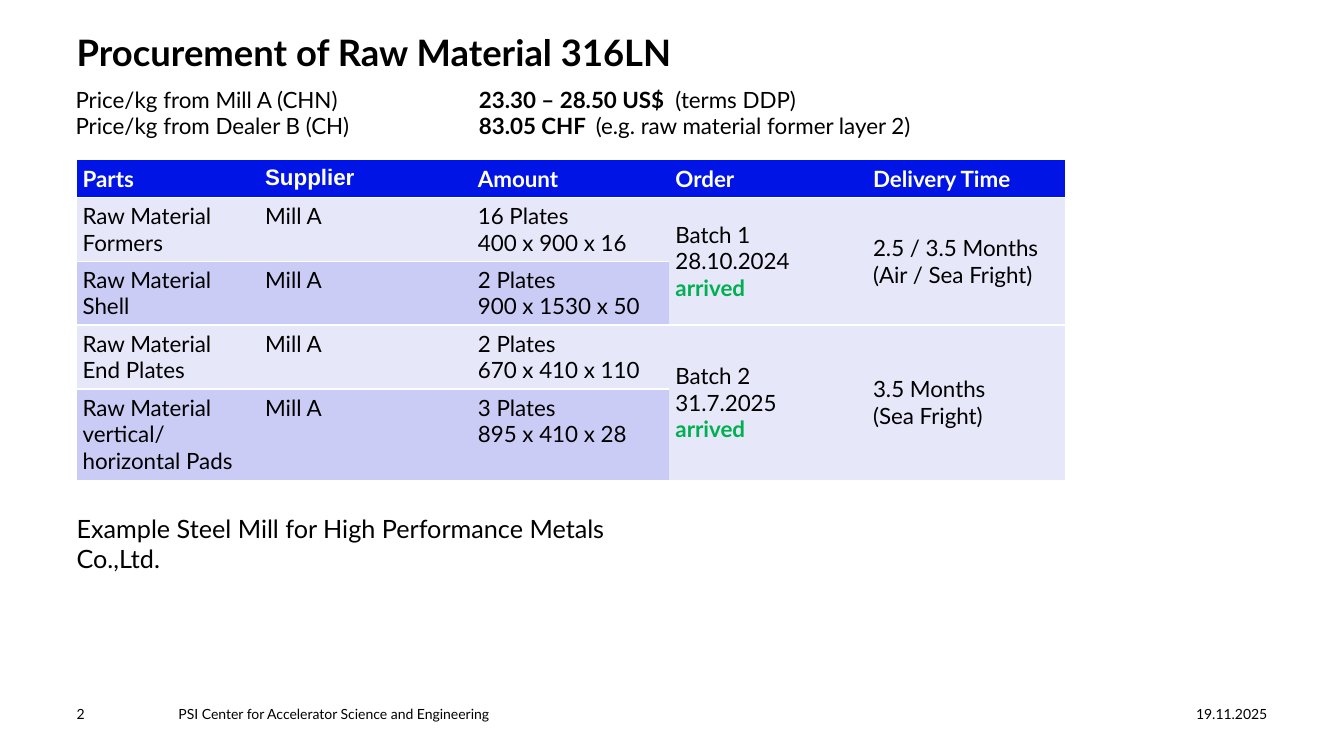
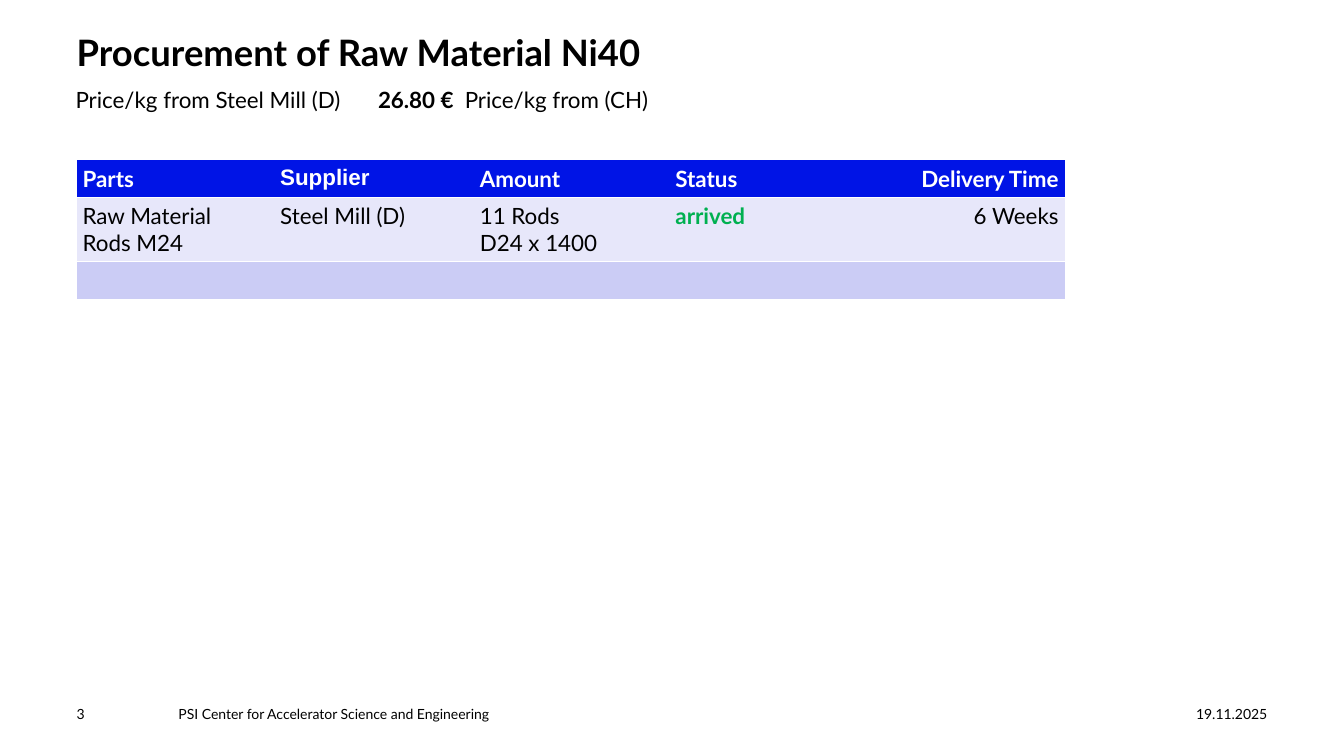
from dataclasses import dataclass

from lxml import etree
from pptx import Presentation
from pptx.dml.color import RGBColor as RGB
from pptx.enum.text import MSO_ANCHOR as ANCHOR, MSO_AUTO_SIZE as FIT, PP_ALIGN as ALIGN
from pptx.oxml.ns import qn
from pptx.util import Inches, Pt


@dataclass(frozen=True)
class Theme:
    # Fonts and type sizes
    font: str = "Lato"
    alt_font: str = "Arial"
    title: int = 26
    note: int = 18
    body: int = 16
    footer: int = 10
    # Colours
    ink: str = "000000"
    white: str = "FFFFFF"
    header: str = "0014E6"
    bands: tuple = ("E7E7FA", "CBCCF5")
    done: str = "00B050"
    # Layout, in inches
    left: float = 0.76
    width: float = 9.8
    line: float = 0.267  # height of one body line


T = Theme()
NO_STYLE = "{2D5ABB26-0587-4C30-8999-92F81FD0307C}"
BOLD = {"bold": True}
ARRIVED = [("arrived", {"bold": True, "color": T.done})]


# Text
def write(tf, paras, size=T.body, color=T.ink, bold=False, font=T.font,
          align=ALIGN.LEFT, tabs=()):
    """Fill a frame; a paragraph is a string or a list of (text, format) runs.

    tabs holds the tab stops of each paragraph, in inches.
    """
    for i, runs in enumerate(paras):
        p = tf.paragraphs[0] if i == 0 else tf.add_paragraph()
        p.alignment = align
        if tabs:
            add_tabs(p, tabs[i])
        for text, fmt in [(runs, {})] if isinstance(runs, str) else runs:
            style = {"size": size, "color": color, "bold": bold, "font": font, **fmt}
            r = p.add_run()
            r.text = text
            r.font.name, r.font.size = style["font"], Pt(style["size"])
            r.font.bold = style["bold"]
            r.font.color.rgb = RGB.from_string(style["color"])


def add_tabs(p, stops):
    tab_list = etree.SubElement(p._p.get_or_add_pPr(), qn("a:tabLst"))
    for stop in stops:
        etree.SubElement(tab_list, qn("a:tab"), pos=str(Inches(stop)), algn="l")


def set_frame(tf):
    tf.margin_left = tf.margin_right = tf.margin_top = tf.margin_bottom = 0
    tf.word_wrap = True
    tf.auto_size = FIT.NONE
    tf.vertical_anchor = ANCHOR.TOP


def add_text(s, box, paras, **fmt):
    tf = s.shapes.add_textbox(*map(Inches, box)).text_frame
    set_frame(tf)
    write(tf, paras, **fmt)


# Slide frame: title and footer
def add_slide(prs, title, number):
    s = prs.slides.add_slide(prs.slide_layouts[5])
    sp = s.shapes.title
    sp.left, sp.top, sp.width, sp.height = map(Inches, (T.left, 0.3, T.width, 0.89))
    set_frame(sp.text_frame)
    write(sp.text_frame, [title], size=T.title, bold=True)
    for x, width, text, align in (
        (T.left, 0.77, str(number), ALIGN.LEFT),
        (1.77, 8.8, "PSI Center for Accelerator Science and Engineering", ALIGN.LEFT),
        (10.8, 1.77, "19.11.2025", ALIGN.RIGHT),
    ):
        add_text(s, (x, 7, width, 0.16), [text], size=T.footer, align=align)
    return s


def add_prices(s, paras, tabs):
    add_text(s, (0.75, 0.85, T.width, T.line * len(paras)), paras, tabs=tabs)


# Table
def add_rule(cell, side):
    ln = etree.Element(qn(f"a:ln{side}"), w=str(Pt(1)))
    fill = etree.SubElement(ln, qn("a:solidFill"))
    etree.SubElement(fill, qn("a:srgbClr"), val=T.white)
    cell._tc.get_or_add_tcPr().insert(0, ln)


def fill_cell(cell, paras, fill, **fmt):
    cell.margin_left = cell.margin_right = Inches(0.06)
    cell.margin_top = cell.margin_bottom = Inches(0.05)
    cell.fill.solid()
    cell.fill.fore_color.rgb = RGB.from_string(fill)
    if cell.is_merge_origin:
        cell.vertical_anchor = ANCHOR.MIDDLE
    if paras:
        write(cell.text_frame, paras, **fmt)
    else:
        end = cell.text_frame.paragraphs[0]._p.get_or_add_endParaRPr()
        end.set("sz", str(T.body * 100))


def add_parts_table(s, widths, lines, header, rows, merges=(), right=()):
    """lines gives the text lines of each body row; merges lists cell corners."""
    heights = [0.1 + T.line * n for n in (1, *lines)]
    frame = s.shapes.add_table(len(heights), len(widths), Inches(T.left), Inches(1.59),
                               Inches(T.width), Inches(sum(heights)))
    table = frame.table
    table._tbl.tblPr.find(qn("a:tableStyleId")).text = NO_STYLE
    for col, width in zip(table.columns, widths):
        col.width = Inches(width)
    for row, height in zip(table.rows, heights):
        row.height = Inches(height)
    for first, last in merges:
        table.cell(*first).merge(table.cell(*last))

    for i, cells in enumerate([[[name] for name in header], *rows]):
        for j, paras in enumerate(cells):
            cell = table.cell(i, j)
            if cell.is_spanned:
                continue
            fmt = {"align": ALIGN.RIGHT if j in right else ALIGN.LEFT}
            if i == 0:
                fmt.update(color=T.white, bold=True)
                fmt["font"] = T.alt_font if j == 1 else T.font
            fill_cell(cell, paras, T.bands[(i - 1) % 2] if i else T.header, **fmt)
            if i + cell.span_height < len(heights):
                add_rule(cell, "B")
            if i:
                add_rule(cell, "T")


# Slides
def steel_slide(prs):
    s = add_slide(prs, "Procurement of Raw Material 316LN", 2)
    add_parts_table(
        s, (1.81, 2.11, 1.96, 1.96, 1.96), (2, 2, 2, 3),
        ("Parts", "Supplier", "Amount", "Order", "Delivery Time"),
        [
            (["Raw Material Formers"], ["Mill A"], ["16 Plates", "400 x 900 x 16"],
             ["Batch 1", "28.10.2024", ARRIVED],
             ["2.5 / 3.5 Months", "(Air / Sea Fright)"]),
            (["Raw Material", "Shell"], ["Mill A"], ["2 Plates", "900 x 1530 x 50"]),
            (["Raw Material", "End Plates"], ["Mill A"], ["2 Plates", "670 x 410 x 110"],
             ["Batch 2", "31.7.2025", ARRIVED], ["3.5 Months", "(Sea Fright)"]),
            (["Raw Material", "vertical/ horizontal Pads"], ["Mill A"],
             ["3 Plates", "895 x 410 x 28"]),
        ],
        merges=[((i, j), (i + 1, j)) for i in (1, 3) for j in (3, 4)],
    )
    add_prices(s, [
        [("Price/kg from Mill A (CHN)\t", {}), ("23.30 – 28.50 US$\t", BOLD),
         ("(terms DDP)", {})],
        [("Price/kg from Dealer B (CH)\t", {}), ("83.05 CHF\t", BOLD),
         ("(e.g. raw material former layer 2)", {})],
    ], tabs=[(4, 5.95), (4, 5.16)])
    add_text(s, (T.left, 5.09, 5.8, 0.6),
             ["Example Steel Mill for High Performance Metals Co.,Ltd."], size=T.note)


def nickel_slide(prs):
    s = add_slide(prs, "Procurement of Raw Material Ni40", 3)
    add_parts_table(
        s, (1.96, 1.98, 1.94, 1.96, 1.96), (2, 1),
        ("Parts", "Supplier", "Amount", "Status", "Delivery Time"),
        [
            (["Raw Material", "Rods M24"], ["Steel Mill (D)"], ["11 Rods", "D24 x 1400"],
             [ARRIVED], ["6 Weeks"]),
            ([],) * 5,
        ],
        right=(4,),
    )
    add_prices(s, [
        [("Price/kg from Steel Mill (D)\t", {}), ("26.80 €\t", BOLD),
         ("Price/kg from (CH)", {})],
    ], tabs=[(3, 3.86)])


def main():
    prs = Presentation()
    prs.slide_width, prs.slide_height = Inches(13.33), Inches(7.5)
    steel_slide(prs)
    nickel_slide(prs)
    prs.save("out.pptx")


if __name__ == "__main__":
    main()
